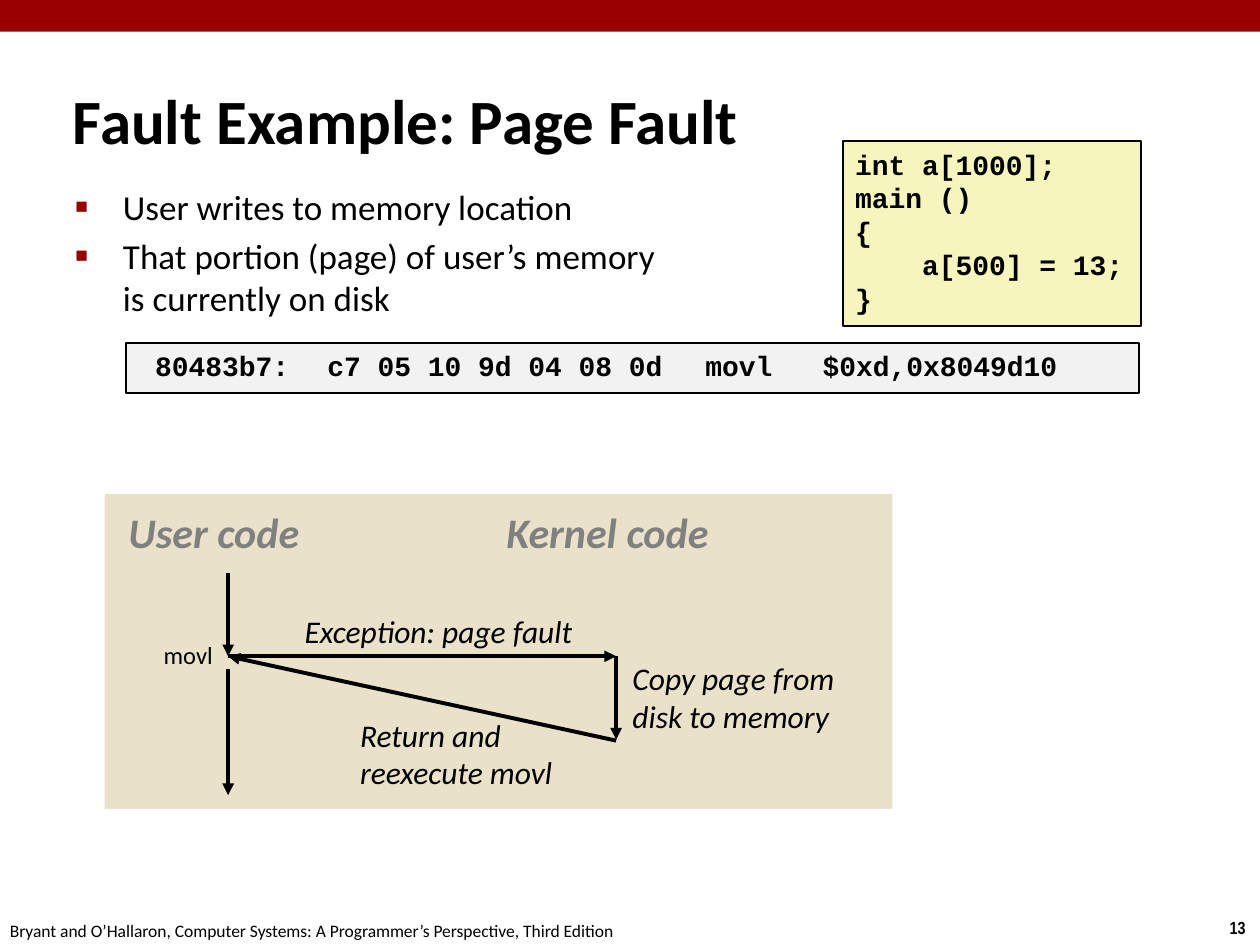
from lxml import etree
from pptx import Presentation
from pptx import util as u
from pptx.dml.color import RGBColor
from pptx.enum import shapes, text
from pptx.oxml.ns import qn

BLACK, RED, GRAY = "000000", "990000", "808080"
CODE = {"name": "Courier New", "size": u.Pt(16), "bold": True}
HEADING = {"name": "Calibri", "size": u.Pt(24), "bold": True, "italic": True}
LABEL = {"name": "Calibri", "size": u.Pt(18), "italic": True}


def rgb(value):
    return RGBColor.from_string(value)


def cm(values):
    return [u.Cm(v) for v in values]


def write(sp, lines, font, color=BLACK, wrap=False, grow=True,
          anchor=text.MSO_ANCHOR.TOP):
    """Fill a shape with one left-aligned paragraph per line."""
    tf = sp.text_frame
    tf.word_wrap = wrap
    tf.vertical_anchor = anchor
    tf.auto_size = (text.MSO_AUTO_SIZE.SHAPE_TO_FIT_TEXT if grow
                    else text.MSO_AUTO_SIZE.NONE)
    for i, line in enumerate(lines):
        p = tf.paragraphs[0] if i == 0 else tf.add_paragraph()
        p.alignment = text.PP_ALIGN.LEFT
        p.text = line
        for r in p.runs:
            for name, value in font.items():
                setattr(r.font, name, value)
            r.font.color.rgb = rgb(color)


def add_text(s, box, lines, font, **options):
    sp = s.shapes.add_textbox(*cm(box))
    write(sp, lines, font, **options)
    return sp


def add_box(s, box, fill, line=None):
    sp = s.shapes.add_shape(shapes.MSO_SHAPE.RECTANGLE, *cm(box))
    sp.shadow.inherit = False
    sp.fill.solid()
    sp.fill.fore_color.rgb = rgb(fill)
    if line:
        sp.line.color.rgb = rgb(line)
        sp.line.width = u.Pt(1)
    else:
        sp.line.fill.background()
    return sp


def add_bullets(sp):
    """Give every paragraph a small red square and a hanging indent."""
    for p in sp.text_frame.paragraphs:
        p.space_before = u.Pt(4)
        pPr = p._p.get_or_add_pPr()
        pPr.set("marL", str(u.Cm(0.96)))
        pPr.set("indent", str(u.Cm(-0.96)))
        color = etree.SubElement(pPr, qn("a:buClr"))
        etree.SubElement(color, qn("a:srgbClr"), val=RED)
        etree.SubElement(pPr, qn("a:buSzPct"), val="60000")
        etree.SubElement(pPr, qn("a:buFont"), typeface="Arial")
        etree.SubElement(pPr, qn("a:buChar"), char="■")


def add_arrow(s, *ends):
    c = s.shapes.add_connector(shapes.MSO_CONNECTOR.STRAIGHT, *cm(ends))
    c.line.color.rgb = rgb(BLACK)
    c.line.width = u.Pt(2.25)
    etree.SubElement(c.line._get_or_add_ln(), qn("a:tailEnd"), type="triangle")
    etree.SubElement(c._element.spPr, qn("a:effectLst"))


def add_frame(s):
    add_box(s, (0, 0, 25.4, 0.64), RED)
    add_text(s, (24.54, 18.36, 0.86, 0.69), ["13"],
             {"name": "Arial Narrow", "size": u.Pt(10), "bold": True})
    add_text(s, (-0.05, 18.42, 12.9, 0.69),
             ["Bryant and O’Hallaron, Computer Systems: "
              "A Programmer’s Perspective, Third Edition"],
             {"name": "Calibri", "size": u.Pt(10)})


def add_explanation(s):
    add_text(s, (1.22, 1.63, 21.92, 1.55), ["Fault Example: Page Fault"],
             {"name": "Calibri", "size": u.Pt(36), "bold": True},
             wrap=True, grow=False, anchor=text.MSO_ANCHOR.MIDDLE)
    body = add_text(s, (1.27, 3.61, 23.93, 2.97),
                    ["User writes to memory location",
                     "That portion (page) of user’s memory \vis currently on disk"],
                    {"name": "Calibri", "size": u.Pt(20)}, wrap=True, grow=False)
    add_bullets(body)


def add_code(s):
    source = add_box(s, (16.99, 2.84, 6.02, 3.73), "F6F5BD", BLACK)
    write(source, ["int a[1000];", "main ()", "{", "    a[500] = 13;", "}"], CODE)
    assembly = add_box(s, (2.54, 6.91, 20.42, 1.02), "F2F2F2", BLACK)
    write(assembly,
          [" 80483b7:\tc7 05 10 9d 04 08 0d \tmovl   $0xd,0x8049d10"], CODE)


def add_control_flow(s):
    add_box(s, (2.11, 9.96, 15.88, 6.35), "E9E1C9")
    for left, width, title in ((2.34, 4.19, "User code"),
                               (9.96, 4.85, "Kernel code")):
        add_text(s, (left, 10.08, width, 1.27), [title], HEADING, color=GRAY)

    user, kernel, fault = 4.6, 12.42, 13.23
    add_arrow(s, user, 11.56, user, fault)
    add_arrow(s, user, fault, kernel, fault)
    add_arrow(s, kernel, fault, kernel, 14.91)
    add_arrow(s, kernel, 14.93, user, fault)
    add_arrow(s, user, 13.49, user, 16.03)

    add_text(s, (5.89, 12.22, 6.15, 1.02), ["Exception: page fault"], LABEL)
    add_text(s, (12.5, 13.16, 5.49, 1.78), ["Copy page from disk to memory"],
             LABEL, wrap=True)
    add_text(s, (7.01, 14.3, 5.05, 1.78), ["Return and reexecute movl"],
             LABEL, wrap=True)
    add_text(s, (3.05, 12.78, 1.52, 0.86), ["movl"],
             {"name": "Calibri", "size": u.Pt(14)})


def main():
    prs = Presentation()
    prs.slide_width, prs.slide_height = cm((25.4, 19.05))
    s = prs.slides.add_slide(prs.slide_layouts[6])
    add_frame(s)
    add_explanation(s)
    add_code(s)
    add_control_flow(s)
    prs.save("out.pptx")


if __name__ == "__main__":
    main()
